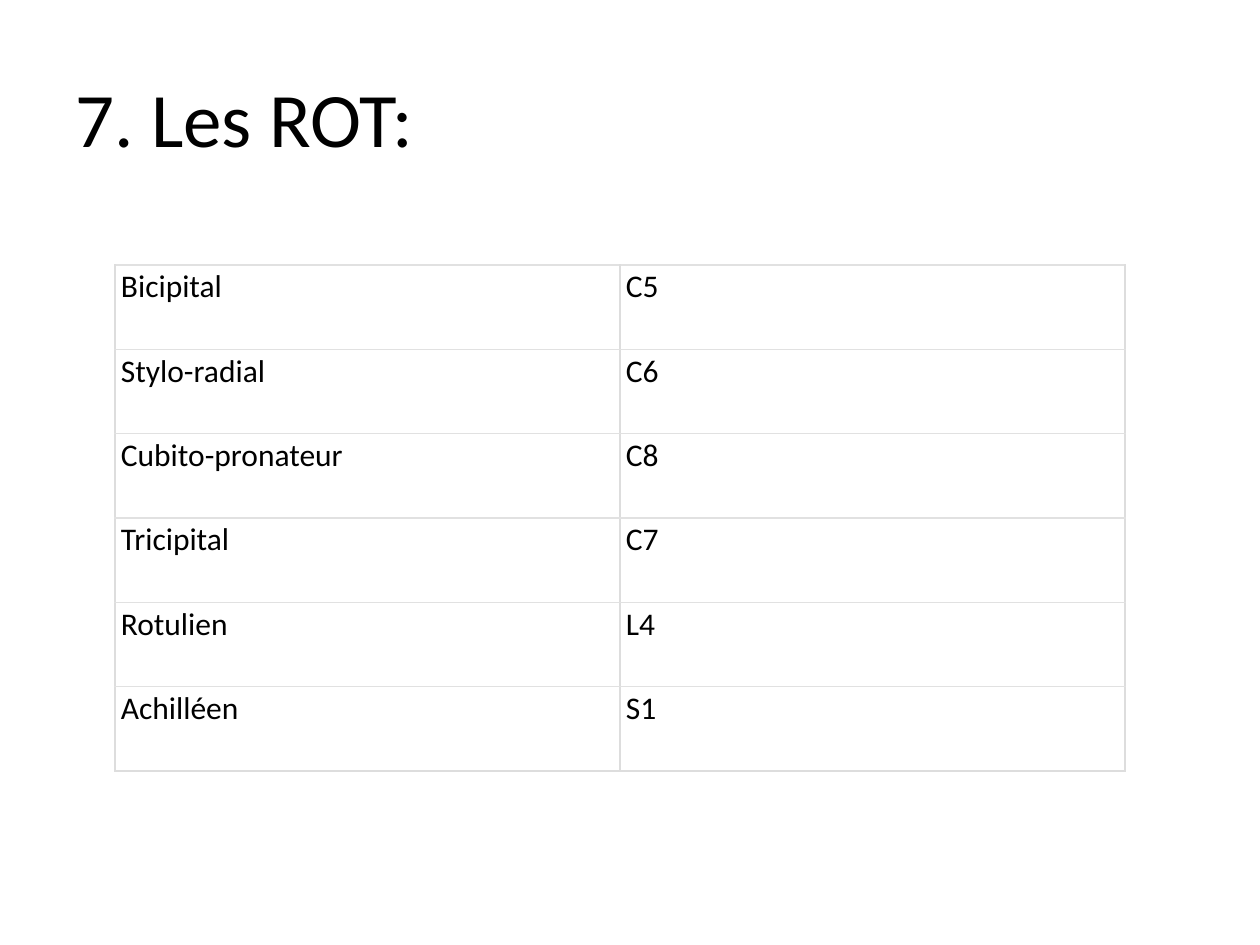
import pptx
import pptx.util
import pptx.dml.color
import pptx.enum.text
import pptx.oxml
import pptx.oxml.ns

# Content
TITLE = "7. Les ROT:"
REFLEXES = [
    ("Bicipital", "C5"),
    ("Stylo-radial", "C6"),
    ("Cubito-pronateur", "C8"),
    ("Tricipital", "C7"),
    ("Rotulien", "L4"),
    ("Achilléen", "S1"),
]

# Style and layout, in px
COLORS = {"text": "000000", "cell": "FFFFFF", "side": "DDDDDD", "rule": "E1E1E1"}
FONT = "Calibri"
PX_PER_INCH = 126
SLIDE_SIZE = (1260, 945)
TITLE_BOX = (63, 38, 1134, 158)
TABLE_BOX = (115, 265, 1010, 506)
CELL_INSET = (6, 3)
BORDER_WIDTH = 0.75


def px(length):
    return pptx.util.Emu(round(length * pptx.util.Inches(1) / PX_PER_INCH))


def rgb(name):
    return pptx.dml.color.RGBColor.from_string(COLORS[name])


def write_text(frame, text, size, color="text", align=pptx.enum.text.PP_ALIGN.LEFT):
    para = frame.paragraphs[0]
    para.alignment = align
    span = para.add_run()
    span.text = text
    span.font.name = FONT
    span.font.size = pptx.util.Pt(size)
    span.font.color.rgb = rgb(color)


def add_borders(cell, colors):
    properties = cell._tc.get_or_add_tcPr()
    for side, color in colors.items():
        properties.append(pptx.oxml.parse_xml(
            f'<a:ln{side} {pptx.oxml.ns.nsdecls("a")} w="{pptx.util.Pt(BORDER_WIDTH)}">'
            f'<a:solidFill><a:srgbClr val="{COLORS[color]}"/></a:solidFill>'
            f'</a:ln{side}>'))


def add_title(page):
    box = page.shapes.title
    box.left, box.top, box.width, box.height = map(px, TITLE_BOX)
    box.text_frame.vertical_anchor = pptx.enum.text.MSO_ANCHOR.MIDDLE
    write_text(box.text_frame, TITLE, size=44)


def add_reflex_table(page):
    row_count, column_count = len(REFLEXES), len(REFLEXES[0])
    table = page.shapes.add_table(row_count, column_count, *map(px, TABLE_BOX)).table
    table.first_row = table.horz_banding = False
    for column in table.columns:
        column.width = px(TABLE_BOX[2] / column_count)
    for row in table.rows:
        row.height = px(TABLE_BOX[3] / row_count)

    for row_index, values in enumerate(REFLEXES):
        bottom = "side" if row_index == row_count - 1 else "rule"
        for column_index, value in enumerate(values):
            cell = table.cell(row_index, column_index)
            cell.margin_left = cell.margin_right = px(CELL_INSET[0])
            cell.margin_top = cell.margin_bottom = px(CELL_INSET[1])
            add_borders(cell, {"L": "side", "R": "side", "T": "rule", "B": bottom})
            cell.fill.solid()
            cell.fill.fore_color.rgb = rgb("cell")
            write_text(cell.text_frame, value, size=18)


def main():
    deck = pptx.Presentation()
    deck.slide_width, deck.slide_height = map(px, SLIDE_SIZE)
    page = deck.slides.add_slide(deck.slide_layouts[5])  # Title only
    add_title(page)
    add_reflex_table(page)
    deck.save("out.pptx")


if __name__ == "__main__":
    main()
